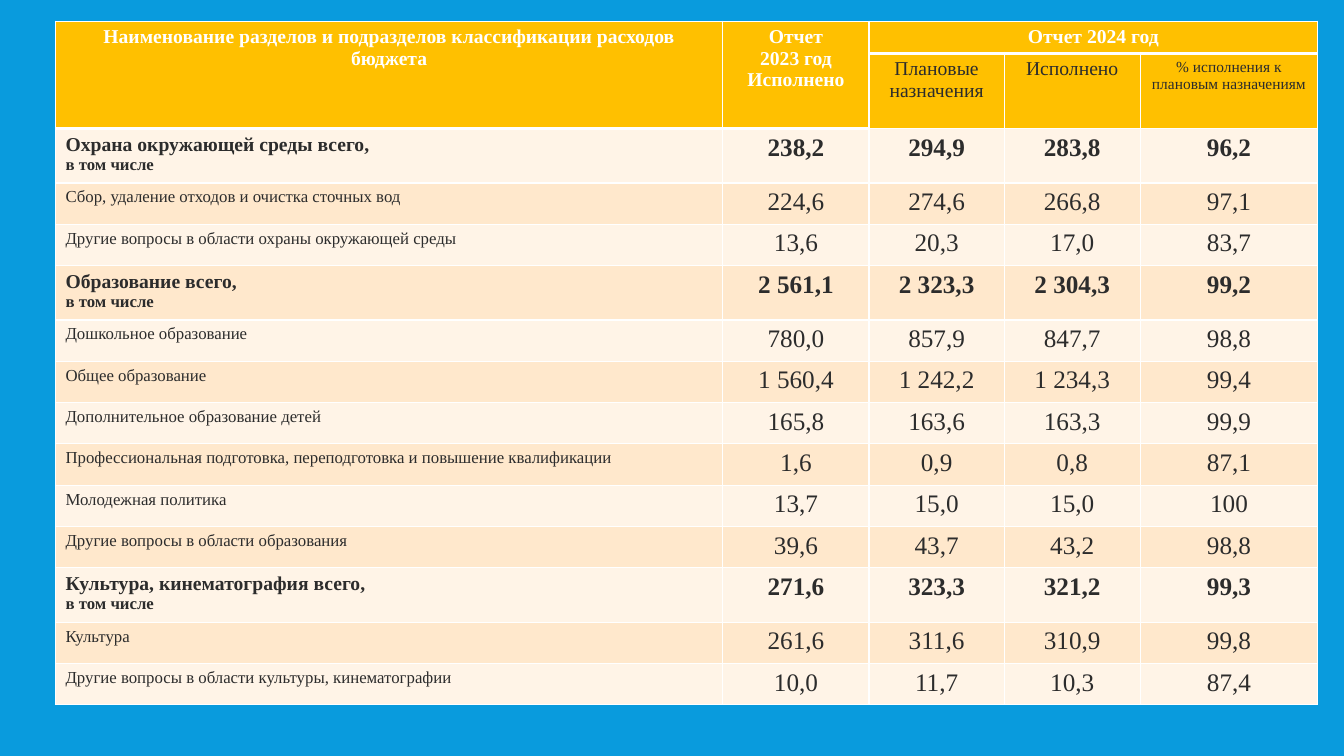
from pptx import Presentation
from pptx.dml.color import RGBColor
from pptx.enum.text import PP_ALIGN
from pptx.oxml import parse_xml
from pptx.oxml.ns import nsdecls
from pptx.util import Inches, Pt

COLORS = {"back": "099BDD", "head": "FFC000", "light": "FFF4E7",
          "warm": "FFE8CC", "text": "2C2C2C", "white": "FFFFFF"}
FONT = "Times New Roman"
NOTE = "в том числе"

ROWS = [
    ("Охрана окружающей среды всего,", "238,2", "294,9", "283,8", "96,2"),
    ("Сбор, удаление отходов и очистка сточных вод", "224,6", "274,6", "266,8", "97,1"),
    ("Другие вопросы в области охраны окружающей среды", "13,6", "20,3", "17,0", "83,7"),
    ("Образование всего,", "2 561,1", "2 323,3", "2 304,3", "99,2"),
    ("Дошкольное образование", "780,0", "857,9", "847,7", "98,8"),
    ("Общее образование", "1 560,4", "1 242,2", "1 234,3", "99,4"),
    ("Дополнительное образование детей", "165,8", "163,6", "163,3", "99,9"),
    ("Профессиональная подготовка, переподготовка и повышение квалификации",
     "1,6", "0,9", "0,8", "87,1"),
    ("Молодежная политика", "13,7", "15,0", "15,0", "100"),
    ("Другие вопросы в области образования", "39,6", "43,7", "43,2", "98,8"),
    ("Культура, кинематография всего,", "271,6", "323,3", "321,2", "99,3"),
    ("Культура", "261,6", "311,6", "310,9", "99,8"),
    ("Другие вопросы в области культуры, кинематографии", "10,0", "11,7", "10,3", "87,4"),
]
# Header cells: row, column, text, size, bold, colour
HEADS = [
    (0, 0, "Наименование разделов и подразделов классификации расходов бюджета",
     14, True, "white"),
    (0, 1, "Отчет\n2023 год Исполнено", 14, True, "white"),
    (0, 2, "Отчет 2024 год", 14, True, "white"),
    (1, 2, "Плановые назначения", 14, False, "text"),
    (1, 3, "Исполнено", 14, False, "text"),
    (1, 4, "% исполнения к плановым назначениям", 11, False, "text"),
]
WIDTHS = [6.62, 1.45, 1.34, 1.35, 1.76]


def write(cell, text, sizes, bold, color, align=PP_ALIGN.CENTER):
    cell.text_frame.text = text
    for i, para in enumerate(cell.text_frame.paragraphs):
        para.alignment = align
        font = para.runs[0].font
        font.name, font.bold = FONT, bold
        font.size = Pt(sizes[min(i, len(sizes) - 1)])
        font.color.rgb = RGBColor.from_string(COLORS[color])


def paint(cell, color, top, base):
    props = cell._tc.get_or_add_tcPr()
    for side, width in (("L", 1), ("R", 1), ("T", top), ("B", base)):
        props.append(parse_xml(
            f'<a:ln{side} {nsdecls("a")} w="{Pt(width)}"><a:solidFill>'
            f'<a:srgbClr val="{COLORS["white"]}"/></a:solidFill></a:ln{side}>'))
    cell.fill.solid()
    cell.fill.fore_color.rgb = RGBColor.from_string(COLORS[color])


# Slide
deck = Presentation()
deck.slide_width, deck.slide_height = Inches(13.33), Inches(7.5)
slide = deck.slides.add_slide(deck.slide_layouts[6])
slide.background.fill.solid()
slide.background.fill.fore_color.rgb = RGBColor.from_string(COLORS["back"])

# Table grid
tall = [0.54 if row[0].endswith("всего,") else 0.41 for row in ROWS]
heights = [0.32, 0.73] + tall
table = slide.shapes.add_table(
    len(heights), len(WIDTHS), Inches(0.55), Inches(0.21),
    Inches(sum(WIDTHS)), Inches(sum(heights))).table
for col, width in zip(table.columns, WIDTHS):
    col.width = Inches(width)
for row, height in zip(table.rows, heights):
    row.height = Inches(height)

# Fills and borders, with a thick line below the top header cells
for r in range(len(heights)):
    for c in range(len(WIDTHS)):
        edge = 2 if c < 2 else 1
        color = "head" if r < 2 else ("light", "warm")[r % 2]
        paint(table.cell(r, c), color,
              3 if r == edge else 1, 3 if r == edge - 1 else 1)

# Header
for c in (0, 1):
    table.cell(0, c).merge(table.cell(1, c))
table.cell(0, 2).merge(table.cell(0, 4))
for r, c, text, size, bold, color in HEADS:
    write(table.cell(r, c), text, [size], bold, color)

# Budget rows
for r, (name, *values) in enumerate(ROWS, 2):
    total = name.endswith("всего,")
    label = f"{name}\n{NOTE}" if total else name
    write(table.cell(r, 0), label, [14, 12] if total else [12],
          total, "text", PP_ALIGN.LEFT)
    for c, value in enumerate(values, 1):
        write(table.cell(r, c), value, [18], total, "text")

deck.save("out.pptx")
